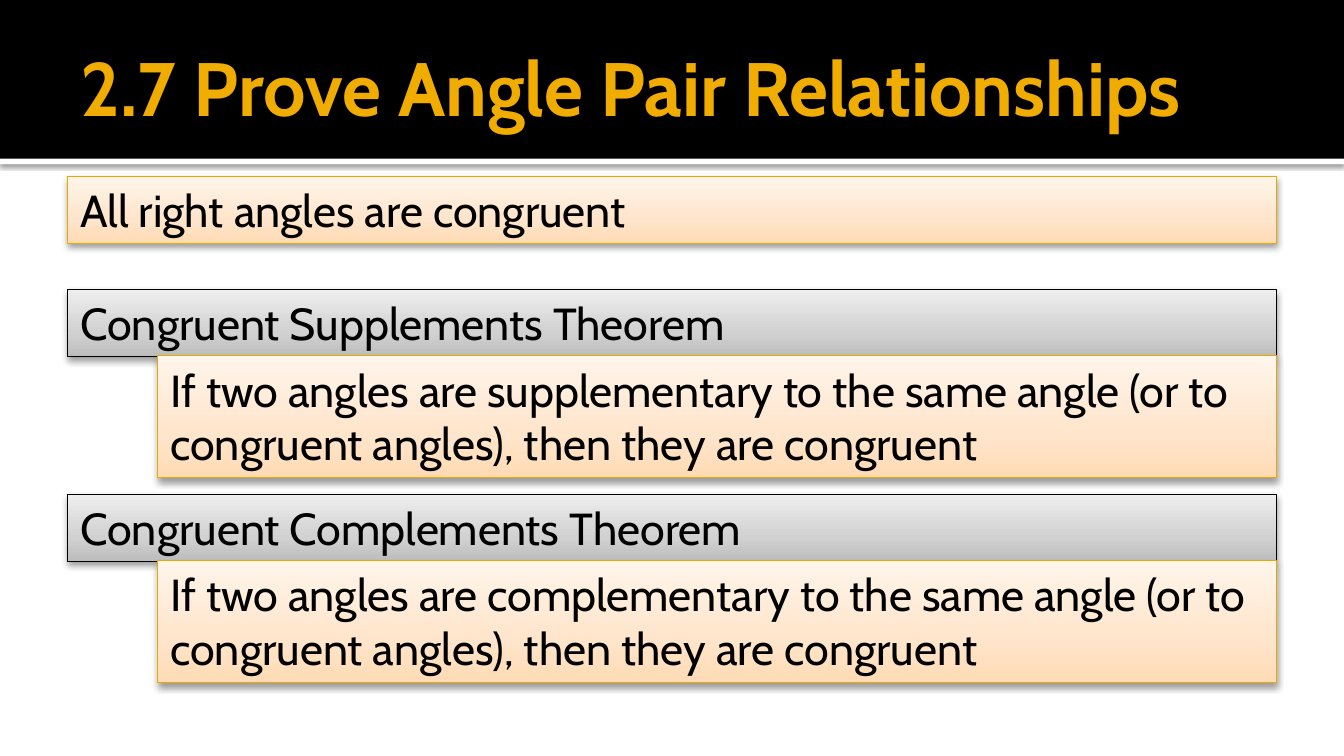
from lxml.etree import SubElement
from pptx import Presentation
from pptx.dml.color import RGBColor
from pptx.enum.shapes import MSO_SHAPE as Preset
from pptx.enum.text import MSO_ANCHOR as Anchor, PP_ALIGN as Align
from pptx.oxml.ns import qn
from pptx.util import Pt

FONT = "Cabin"
COLORS = {"black": "000000", "white": "FFFFFF", "gold": "F0AD00", "border": "EBA900"}
# Gradient stops run from the bottom edge to the top edge
STYLES = {
    "statement": {"line": "border", "stops": [(0, "FFDBB5"), (35, "FFE5CB"), (100, "FFF5EB")]},
    "heading": {"line": "black", "stops": [(0, "BDBDBD"), (35, "D1D1D1"), (100, "EEEEEE")]},
}
ROW_HEIGHT = 36
INDENT = 48.2
THEOREMS = [
    ("Congruent Supplements Theorem",
     "If two angles are supplementary to the same angle (or to congruent angles), "
     "then they are congruent"),
    ("Congruent Complements Theorem",
     "If two angles are complementary to the same angle (or to congruent angles), "
     "then they are congruent"),
]


def color(name):
    return RGBColor.from_string(COLORS[name])


def write_text(shape, text, size=24, fill="black", bold=False, anchor=Anchor.TOP,
               margins=(7.2, 3.6, 7.2, 3.6)):
    frame = shape.text_frame
    frame.word_wrap = True
    frame.vertical_anchor = anchor
    (frame.margin_left, frame.margin_top,
     frame.margin_right, frame.margin_bottom) = map(Pt, margins)
    paragraph = frame.paragraphs[0]
    paragraph.alignment = Align.LEFT
    run = paragraph.add_run()
    run.text = text
    run.font.name = FONT
    run.font.size = Pt(size)
    run.font.bold = bold
    run.font.color.rgb = color(fill)


def add_rectangle(slide, left, top, width, height, fill=None):
    shape = slide.shapes.add_shape(Preset.RECTANGLE, Pt(left), Pt(top), Pt(width), Pt(height))
    shape.shadow.inherit = False
    if fill:
        shape.fill.solid()
        shape.fill.fore_color.rgb = color(fill)
        shape.line.fill.background()
    return shape


def add_shadow(shape, blur, distance, opacity):
    effects = shape.element.spPr.find(qn("a:effectLst"))
    shadow = SubElement(effects, qn("a:outerShdw"), blurRad=str(Pt(blur)), dist=str(Pt(distance)),
                        dir="5400000", rotWithShape="0")
    tone = SubElement(shadow, qn("a:srgbClr"), val=COLORS["black"])
    SubElement(tone, qn("a:alpha"), val=str(opacity * 1000))


def fill_gradient(shape, stops):
    shape.fill.gradient()
    shape.fill.gradient_angle = 90
    stop_list = shape.element.spPr.find(".//" + qn("a:gsLst"))
    for stop in list(stop_list):
        stop_list.remove(stop)
    for position, tone in stops:
        stop = SubElement(stop_list, qn("a:gs"), pos=str(position * 1000))
        SubElement(stop, qn("a:srgbClr"), val=tone)


def add_panel(slide, text, style, left, top, width, height):
    panel = add_rectangle(slide, left, top, width, height)
    fill_gradient(panel, STYLES[style]["stops"])
    panel.line.color.rgb = color(STYLES[style]["line"])
    panel.line.width = Pt(0.5)
    add_shadow(panel, blur=3.5, distance=2, opacity=38)
    write_text(panel, text)


def add_header(slide, text, left, top, width, height):
    # White rule with its shadow, below the black band
    rule = add_rectangle(slide, left, top + height, width, 3, "white")
    add_shadow(rule, blur=2.5, distance=0.8, opacity=60)
    add_rectangle(slide, left, top, width, height, "black")
    title = slide.shapes.add_textbox(Pt(left + 36), Pt(top + 9.4), Pt(width - 72), Pt(height - 11))
    write_text(title, text, size=40.5, fill="gold", bold=True, anchor=Anchor.MIDDLE,
               margins=(7.2, 3.6, 3.6, 3.6))


def add_theorem(slide, name, statement, left, top, width, height):
    # Heading across the box, indented statement right beneath it
    add_panel(slide, name, "heading", left, top, width, ROW_HEIGHT)
    offset = ROW_HEIGHT - 0.4
    add_panel(slide, statement, "statement", left + INDENT, top + offset,
              width - INDENT, height - offset)


def main():
    presentation = Presentation()
    presentation.slide_width, presentation.slide_height = Pt(720), Pt(405)
    slide = presentation.slides.add_slide(presentation.slide_layouts[6])

    add_header(slide, "2.7 Prove Angle Pair Relationships", 0, 0, 720, 85)
    add_panel(slide, "All right angles are congruent", "statement", 36, 94.4, 648, ROW_HEIGHT)
    for index, (name, statement) in enumerate(THEOREMS):
        add_theorem(slide, name, statement, 36, 155 + index * 109.7, 648, 101)

    presentation.save("out.pptx")


if __name__ == "__main__":
    main()
